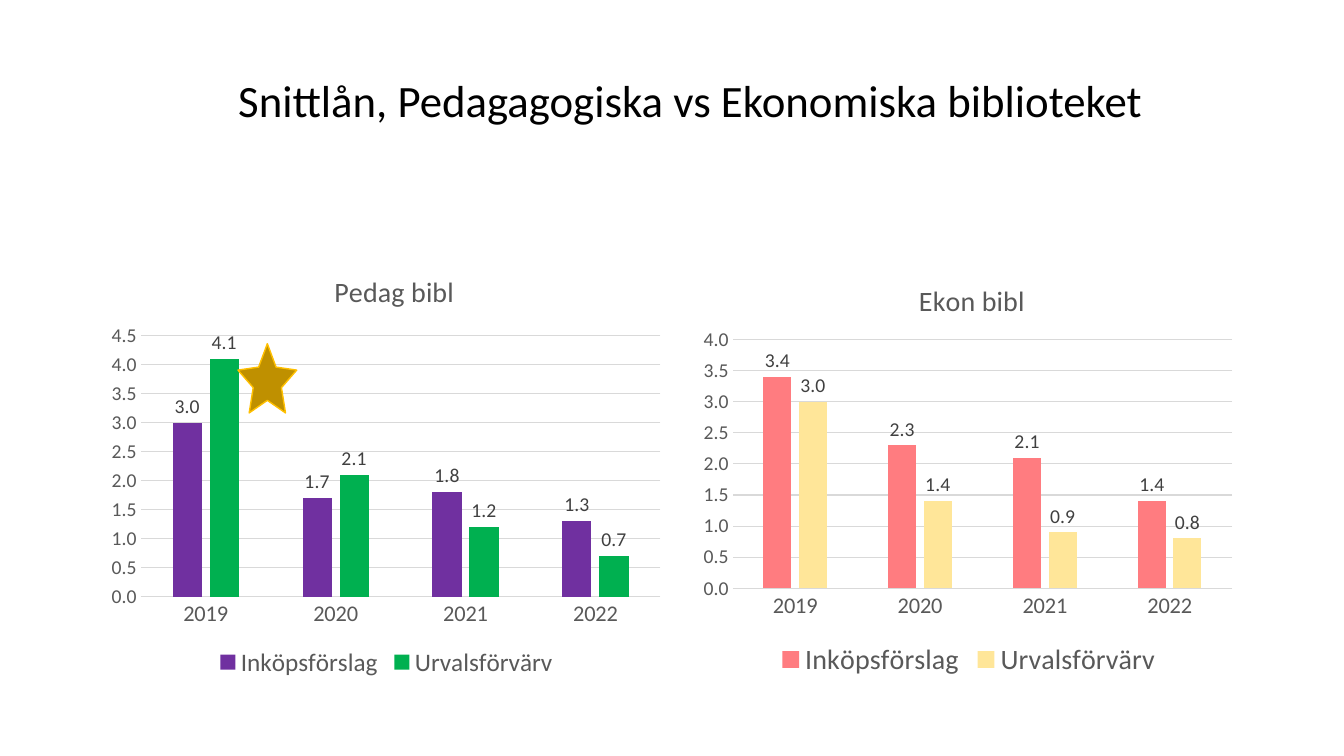
from dataclasses import dataclass

from lxml import etree
from pptx import Presentation
from pptx.chart.data import CategoryChartData
from pptx.dml.color import RGBColor
from pptx.enum.chart import XL_CHART_TYPE, XL_LABEL_POSITION, XL_LEGEND_POSITION, XL_TICK_MARK
from pptx.enum.shapes import MSO_SHAPE
from pptx.enum.text import MSO_ANCHOR, PP_ALIGN
from pptx.oxml.ns import qn
from pptx.util import Pt

COLUMNS = XL_CHART_TYPE.COLUMN_CLUSTERED
OUTSIDE_END = XL_LABEL_POSITION.OUTSIDE_END
BOTTOM = XL_LEGEND_POSITION.BOTTOM
NO_TICK = XL_TICK_MARK.NONE
STAR = MSO_SHAPE.STAR_5_POINT
TOP = MSO_ANCHOR.TOP
CENTER = PP_ALIGN.CENTER


@dataclass(frozen=True)
class Theme:
    """Colours, type sizes and font of the deck."""
    font: str = "Calibri"
    black: str = "000000"
    gray: str = "595959"
    label: str = "404040"
    grid: str = "D9D9D9"
    star_fill: str = "BF9000"
    star_line: str = "FFC000"
    heading_size: int = 32
    chart_title_size: int = 20
    category_size: int = 16
    value_size: int = 14


THEME = Theme()
YEARS = ["2019", "2020", "2021", "2022"]
SERIES_NAMES = ["Inköpsförslag", "Urvalsförvärv"]
CHARTS = [
    {"title": "Pedag bibl", "box": (72, 181.5, 408, 306),
     "values": [(3.0, 1.7, 1.8, 1.3), (4.1, 2.1, 1.2, 0.7)],
     "colors": ("7030A0", "00B050"), "maximum": 4.5, "legend_size": 18,
     "title_at": (0.4, 0.03), "plot_at": (0.07, 0.19, 0.91, 0.61)},
    {"title": "Ekon bibl", "box": (496, 181.5, 392, 306),
     "values": [(3.4, 2.3, 2.1, 1.4), (3.0, 1.4, 0.9, 0.8)],
     "colors": ("FF7C80", "FFE699"), "maximum": 4.0, "legend_size": 20,
     "title_at": (0.4, 0.05), "plot_at": (0.07, 0.2, 0.91, 0.58)},
]


def style_font(font, size, color):
    """Give a font the theme typeface, a size and a colour."""
    font.name = THEME.font
    font.size = Pt(size)
    font.bold = False
    font.color.rgb = RGBColor.from_string(color)


def style_line(line, color, width):
    """Give a line a solid colour and a width."""
    line.color.rgb = RGBColor.from_string(color)
    line.width = Pt(width)


def set_layout(parent, index, fractions, inner=False):
    """Place a chart part at fractions of the chart area."""
    for old in parent.findall(qn("c:layout")):
        parent.remove(old)
    layout = etree.Element(qn("c:layout"))
    manual = etree.SubElement(layout, qn("c:manualLayout"))
    entries = [("layoutTarget", "inner")] if inner else []
    entries += [("xMode", "edge"), ("yMode", "edge")]
    entries += list(zip("xywh", fractions))
    for name, value in entries:
        etree.SubElement(manual, qn("c:" + name)).set("val", str(value))
    parent.insert(index, layout)


def add_heading(page, box, text):
    """Add the centred heading at the top of its box."""
    frame = page.shapes.add_textbox(*map(Pt, box)).text_frame
    frame.word_wrap = True
    frame.vertical_anchor = TOP
    frame.text = text
    para = frame.paragraphs[0]
    para.alignment = CENTER
    para.line_spacing = 0.9
    style_font(para.runs[0].font, THEME.heading_size, THEME.black)


def style_axes(chart, maximum):
    """Format the year axis and the value axis with its grid."""
    years, values = chart.category_axis, chart.value_axis
    for axis, size in ((years, THEME.category_size), (values, THEME.value_size)):
        axis.major_tick_mark = axis.minor_tick_mark = NO_TICK
        style_font(axis.tick_labels.font, size, THEME.gray)
    style_line(years.format.line, THEME.grid, 0.75)
    values.format.line.fill.background()
    values.minimum_scale, values.maximum_scale = 0, maximum
    values.major_unit = 0.5
    values.tick_labels.number_format = "0.0"
    values.tick_labels.number_format_is_linked = False
    style_line(values.major_gridlines.format.line, THEME.grid, 0.75)


def style_columns(plot, colors):
    """Colour the columns and show their values above them."""
    plot.gap_width, plot.overlap = 219, -27
    plot.vary_by_categories = False
    for series, color in zip(plot.series, colors):
        series.format.fill.solid()
        series.format.fill.fore_color.rgb = RGBColor.from_string(color)
        labels = series.data_labels
        labels.show_value = True
        labels.position = OUTSIDE_END
        labels.number_format = "0.0"
        labels.number_format_is_linked = False
        style_font(labels.font, THEME.value_size, THEME.label)


def add_loan_chart(page, box, details):
    """Add a titled column chart of average loans in its box."""
    data = CategoryChartData(number_format="0.0")
    data.categories = YEARS
    for name, values in zip(SERIES_NAMES, details["values"]):
        data.add_series(name, values)
    chart = page.shapes.add_chart(COLUMNS, *map(Pt, box), data).chart
    style_font(chart.font, 10, THEME.black)

    chart.has_title = True
    title = chart.chart_title
    title.include_in_layout = False
    title.text_frame.text = details["title"]
    span = title.text_frame.paragraphs[0].runs[0]
    style_font(span.font, THEME.chart_title_size, THEME.gray)
    set_layout(title._element, 1, details["title_at"])

    chart.has_legend = True
    chart.legend.position = BOTTOM
    chart.legend.include_in_layout = False
    style_font(chart.legend.font, details["legend_size"], THEME.gray)

    style_axes(chart, details["maximum"])
    style_columns(chart.plots[0], details["colors"])
    plot_area = chart._chartSpace.chart.plotArea
    set_layout(plot_area, 0, details["plot_at"], inner=True)


def add_star(page, box):
    """Add the gold star that marks the highest column."""
    star = page.shapes.add_shape(STAR, *map(Pt, box))
    star.adjustments[0] = 0.24
    star.shadow.inherit = False
    star.fill.solid()
    star.fill.fore_color.rgb = RGBColor.from_string(THEME.star_fill)
    style_line(star.line, THEME.star_line, 1)


def build_comparison(page):
    """Compose the heading, both charts and the star."""
    add_heading(page, (72, 52.5, 842.5, 85.5),
                "Snittlån, Pedagagogiska vs Ekonomiska biblioteket")
    for details in CHARTS:
        add_loan_chart(page, details["box"], details)
    add_star(page, (170, 245.5, 42, 49.5))


def main():
    """Create the deck and save it."""
    deck = Presentation()
    deck.slide_width, deck.slide_height = Pt(960), Pt(540)
    build_comparison(deck.slides.add_slide(deck.slide_layouts[6]))
    deck.save("out.pptx")


if __name__ == "__main__":
    main()
